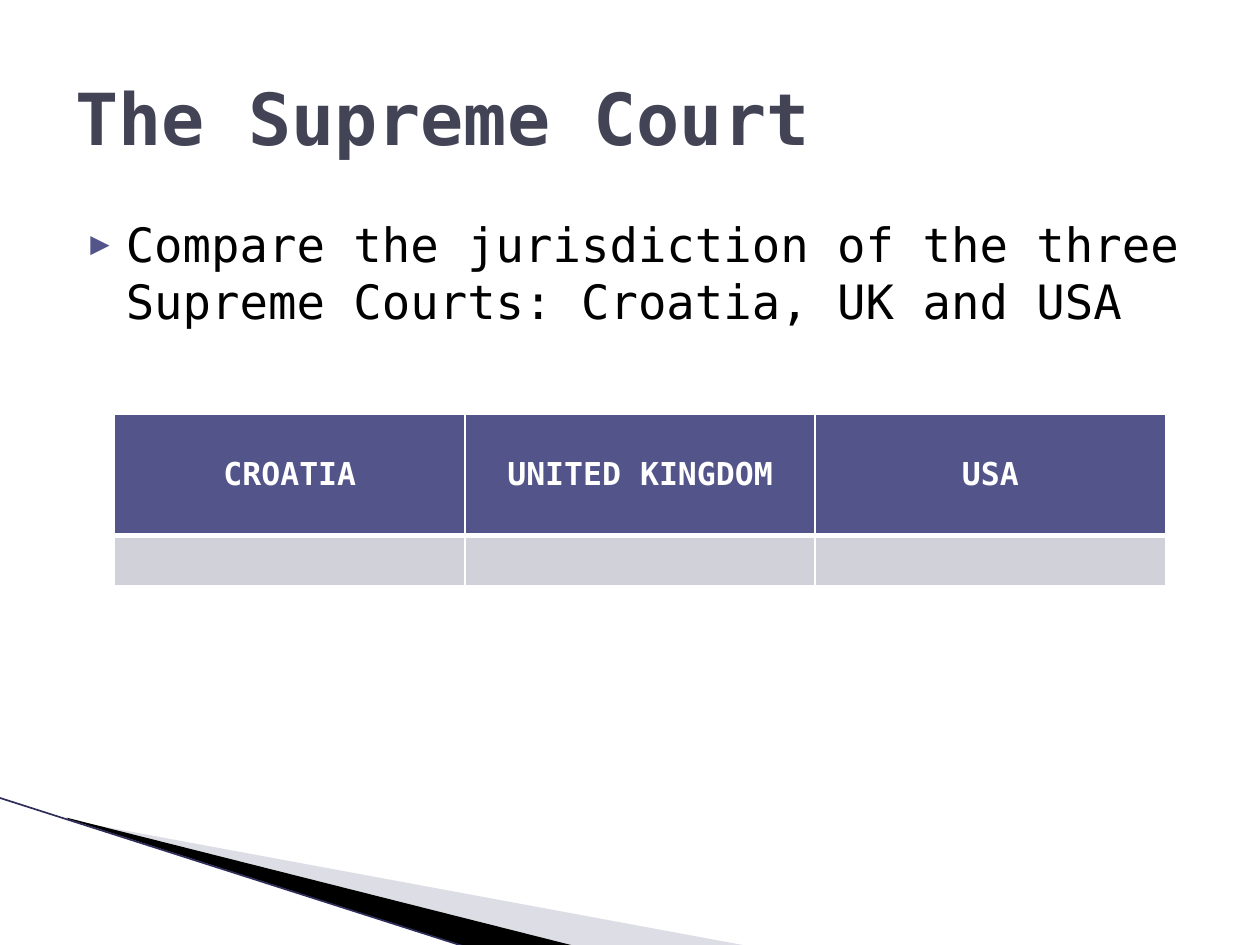
from lxml.etree import SubElement
from pptx import Presentation
from pptx.dml.color import RGBColor
from pptx.enum.shapes import MSO_CONNECTOR as Connector
from pptx.enum.text import MSO_ANCHOR as Anchor, PP_ALIGN as Align
from pptx.oxml.ns import qn
from pptx.util import Inches, Pt

COLORS = {
    "title": "424456", "body": "000000", "accent": "53548A", "white": "FFFFFF",
    "cell": "D1D1DA", "pale": "AAAABF", "black": "000000", "edge": "2F2D5A",
}
COLS, ROWS = 100, 75


def add_xml(parent, tag, **attributes):
    return SubElement(parent, qn(tag), attributes)


class Deck:
    """Style and current slide; lengths are columns and rows of the grid."""
    font_name = "DejaVu Sans Mono"

    def __init__(self):
        self.prs = Presentation()
        self.prs.slide_width, self.prs.slide_height = Inches(10), Inches(7.5)
        self.slide = self.prs.slides.add_slide(self.prs.slide_layouts[6])

    def x(self, columns):
        return round(self.prs.slide_width * columns / COLS)

    def y(self, rows):
        return round(self.prs.slide_height * rows / ROWS)

    def rgb(self, name):
        return RGBColor.from_string(COLORS[name])

    def box(self, left, top, width, height):
        return self.x(left), self.y(top), self.x(width), self.y(height)

    def style(self, paragraph, size, color, bold=False):
        font = paragraph.font
        font.name, font.size, font.bold = self.font_name, Pt(size), bold
        font.color.rgb = self.rgb(color)

    def wedge(self, points, color, alpha=100):
        start, *rest = [(self.x(x), self.y(y)) for x, y in points]
        builder = self.slide.shapes.build_freeform(*start)
        builder.add_line_segments(rest, close=True)
        shape = builder.convert_to_shape()
        shape.shadow.inherit = False
        shape.fill.solid()
        shape.fill.fore_color.rgb = self.rgb(color)
        shape.line.fill.background()
        if alpha < 100:
            tint = shape.fill._xPr.find(".//" + qn("a:srgbClr"))
            add_xml(tint, "a:alpha", val=str(alpha * 1000))

    def line(self, start, end, color, width):
        line = self.slide.shapes.add_connector(
            Connector.STRAIGHT, self.x(start[0]), self.y(start[1]),
            self.x(end[0]), self.y(end[1]))
        line.line.color.rgb = self.rgb(color)
        line.line.width = Pt(width)
        add_xml(line._element.spPr, "a:effectLst")

    def text(self, area, wording, size, color, bold=False,
             anchor=Anchor.TOP, inset=0.5, bullet=False):
        frame = self.slide.shapes.add_textbox(*self.box(*area)).text_frame
        frame.word_wrap = True
        frame.vertical_anchor = anchor
        frame.margin_top = self.y(inset)
        paragraph = frame.paragraphs[0]
        paragraph.text = wording
        if bullet:
            self.bullet(paragraph)
        self.style(paragraph, size, color, bold)

    def bullet(self, paragraph):
        properties = paragraph._p.get_or_add_pPr()
        properties.set("marL", str(self.x(4)))
        properties.set("indent", str(-self.x(2.8)))
        tint = add_xml(properties, "a:buClr")
        add_xml(tint, "a:srgbClr", val=COLORS["accent"])
        add_xml(properties, "a:buSzPct", val="68000")
        add_xml(properties, "a:buFont", typeface=self.font_name)
        add_xml(properties, "a:buChar", char="▶")

    def borders(self, cell, **widths):
        properties = cell._tc.get_or_add_tcPr()
        for position, side in enumerate("LRTB"):
            edge = add_xml(properties, f"a:ln{side}", w=str(Pt(widths.get(side, 1))))
            properties.insert(position, edge)
            fill = add_xml(edge, "a:solidFill")
            add_xml(fill, "a:srgbClr", val=COLORS["white"])

    def table(self, area, headings, heights):
        table = self.slide.shapes.add_table(
            len(heights), len(headings), *self.box(*area)).table
        for row, height in zip(table.rows, heights):
            row.height = self.y(height)
        for column, heading in enumerate(headings):
            header, blank = table.cell(0, column), table.cell(1, column)
            header.text = heading
            header.vertical_anchor = Anchor.MIDDLE
            for cell, color in ((header, "accent"), (blank, "cell")):
                cell.fill.solid()
                cell.fill.fore_color.rgb = self.rgb(color)
                paragraph = cell.text_frame.paragraphs[0]
                paragraph.alignment = Align.CENTER
                self.style(paragraph, 18, "white", bold=True)
            self.borders(header, B=3)
            self.borders(blank, T=3)


def main():
    deck = Deck()
    deck.wedge([(5.5, 65.1), (59.5, 75.1), (45.6, 75.1), (5.5, 65)], "pale", alpha=40)
    deck.wedge([(5.3, 64.9), (45.7, 75.1), (37.2, 75.2), (5.4, 65)], "black")
    deck.line((-0.1, 63.3), (37.1, 75.2), "edge", 0.95)
    deck.text((5, 16.2, 90, 49.5),
              "Compare the jurisdiction of the three Supreme Courts: Croatia, UK and USA",
              27, "body", inset=0.9, bullet=True)
    deck.text((5, 3, 90, 12.5), "The Supreme Court", 41, "title",
              bold=True, anchor=Anchor.MIDDLE)
    deck.table((9.1, 32.9, 83.4, 13.6), ["CROATIA", "UNITED KINGDOM", "USA"],
               heights=[9.6, 4])
    deck.prs.save("out.pptx")


if __name__ == "__main__":
    main()
